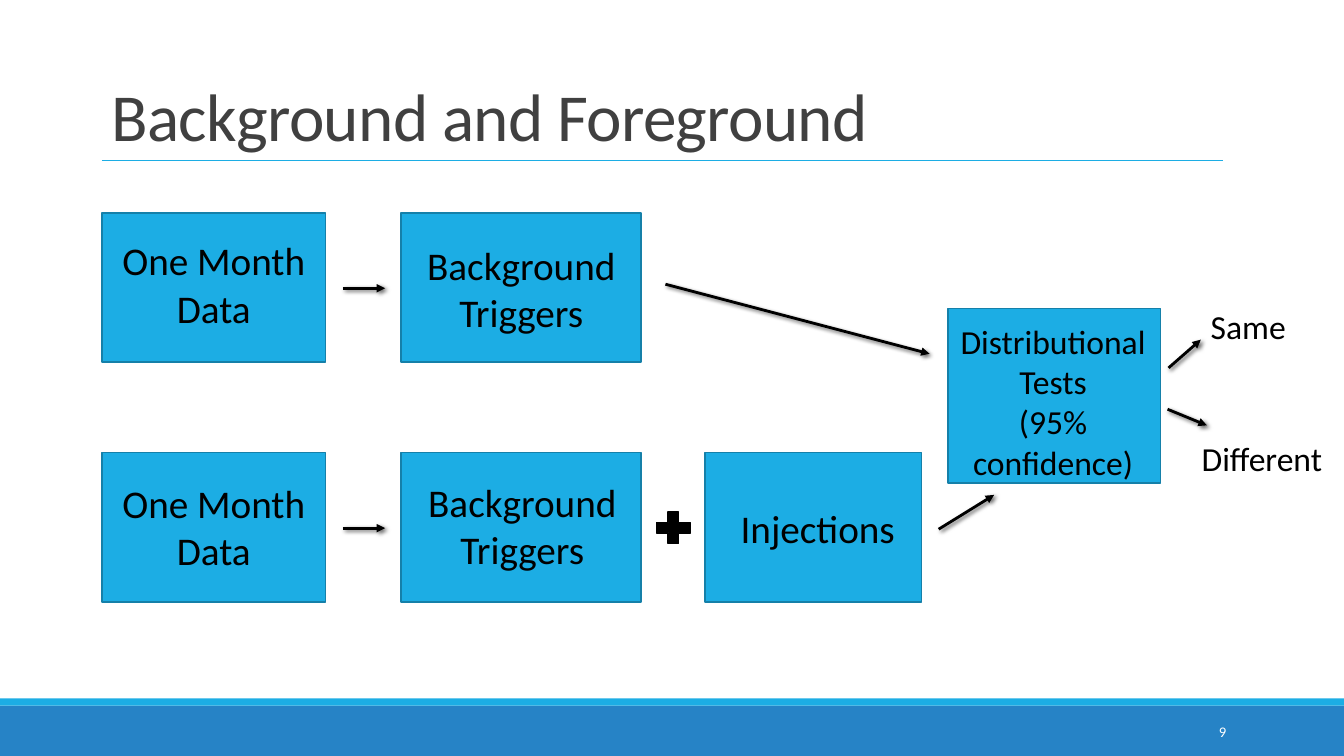
from lxml import etree
from pptx import Presentation
from pptx.dml.color import RGBColor
from pptx.enum import shapes, text
from pptx.oxml import ns
from pptx.util import Inches, Pt

BLUE, EDGE, BAND, BLACK = "1CADE4", "1580A9", "2683C6", "000000"
KIND = shapes.MSO_SHAPE
ALIGN = text.PP_ALIGN
ANCHOR = text.MSO_ANCHOR


def color(code):
    return RGBColor.from_string(code)


def child(node, tag, **attrs):
    return etree.SubElement(node, ns.qn(tag), attrs)


def form(slide, kind, box, fill, edge=None):
    shape = slide.shapes.add_shape(kind, *map(Inches, box))
    shape.shadow.inherit = False
    shape.fill.solid()
    shape.fill.fore_color.rgb = color(fill)
    if edge:
        shape.line.color.rgb = color(edge)
        shape.line.width = Pt(1.25)
    else:
        shape.line.fill.background()


def label(slide, box, lines, size, align=ALIGN.CENTER, anchor=ANCHOR.TOP, ink=BLACK):
    frame = slide.shapes.add_textbox(*map(Inches, box)).text_frame
    frame.word_wrap = True
    frame.vertical_anchor = anchor
    frame.text = lines
    for par in frame.paragraphs:
        par.alignment = align
        par.font.name = "Calibri"
        par.font.size = Pt(size)
        par.font.color.rgb = color(ink)
    return frame


def line(slide, start, end, ink, width):
    link = slide.shapes.add_connector(
        shapes.MSO_CONNECTOR.STRAIGHT, *map(Inches, start + end))
    link.line.color.rgb = color(ink)
    link.line.width = Pt(width)
    return link, child(link._element.spPr, "a:effectLst")


def arrow(slide, start, end):
    link, effects = line(slide, start, end, BLACK, 2)
    child(link.line._get_or_add_ln(), "a:tailEnd", type="triangle")
    shade = child(effects, "a:outerShdw", blurRad=str(Pt(3)), dist=str(Pt(2)),
                  dir=str(45 * 60000), algn="ctr", rotWithShape="0")
    ink = child(shade, "a:srgbClr", val=BLACK)
    child(ink, "a:alpha", val="60000")


def block(slide, box, lines, shift, size=28, wide=2.22, high=1.04):
    """Draw a blue box with its label shifted from the box corner."""
    form(slide, KIND.RECTANGLE, box, BLUE, EDGE)
    left, top = box[0] + shift[0], box[1] + shift[1]
    label(slide, (left, top, wide, high), lines, size)


def header(slide, left, top):
    frame = label(slide, (left, top, 11, 0.83), "Background and Foreground", 48,
                  ALIGN.LEFT, ANCHOR.BOTTOM, "404040")
    par = frame.paragraphs[0]
    par.line_spacing = 0.85
    par.runs[0].font._element.set("spc", "-50")
    line(slide, (left, top + 0.83), (left + 11.12, top + 0.83), BLUE, 1)


def footer(slide, top, wide):
    form(slide, KIND.RECTANGLE, (0, top + 0.07, wide, 0.5), BAND)
    form(slide, KIND.RECTANGLE, (0, top, wide, 0.07), BLUE)
    label(slide, (10.83, top + 0.13, 1.43, 0.4), "9", 10.5,
          ALIGN.RIGHT, ANCHOR.MIDDLE, "FFFFFF")


def source(slide, left, top, drop, shift):
    """Draw one month of data leading to its background triggers."""
    block(slide, (left, top, 2.22, 1.48), "One Month Data", (0, drop))
    block(slide, (left + 2.97, top, 2.38, 1.48), "Background\nTriggers", shift)
    mid = top + 0.75
    arrow(slide, (left + 2.39, mid), (left + 2.81, mid))


def inject(slide, left, top):
    form(slide, KIND.MATH_PLUS, (left, top + 0.53, 0.46, 0.43), BLACK, BLACK)
    block(slide, (left + 0.54, top, 2.15, 1.48), "Injections", (0.01, 0.46), high=0.57)


def tests(slide, left, top):
    """Draw the tests, the arrows into them and both outcomes."""
    block(slide, (left, top, 2.11, 1.73), "Distributional Tests\n(95% confidence)",
          (0.01, 0.07), 24, 2.07, 1.72)
    arrow(slide, (left - 2.8, top - 0.24), (left - 0.18, top + 0.45))
    arrow(slide, (left - 0.09, top + 2.19), (left + 0.46, top + 1.85))
    arrow(slide, (left + 2.19, top + 0.59), (left + 2.51, top + 0.31))
    arrow(slide, (left + 2.18, top + 1), (left + 2.57, top + 1.16))
    label(slide, (left + 2.51, top - 0.07, 0.99, 0.5), "Same", 24, ALIGN.LEFT)
    label(slide, (left + 2.42, top + 1.24, 1.47, 0.5), "Different", 24, ALIGN.LEFT)


def main():
    deck = Presentation()
    deck.slide_width, deck.slide_height = Inches(13.33), Inches(7.5)
    slide = deck.slides.add_slide(deck.slide_layouts[6])
    footer(slide, 6.93, 13.33)
    header(slide, 1.01, 0.76)
    source(slide, 1.01, 2.11, 0.19, (0.08, 0.23))
    source(slide, 1.01, 4.49, 0.22, (0.09, 0.21))
    inject(slide, 6.45, 4.49)
    tests(slide, 9.4, 3.06)
    deck.save("out.pptx")


if __name__ == "__main__":
    main()
